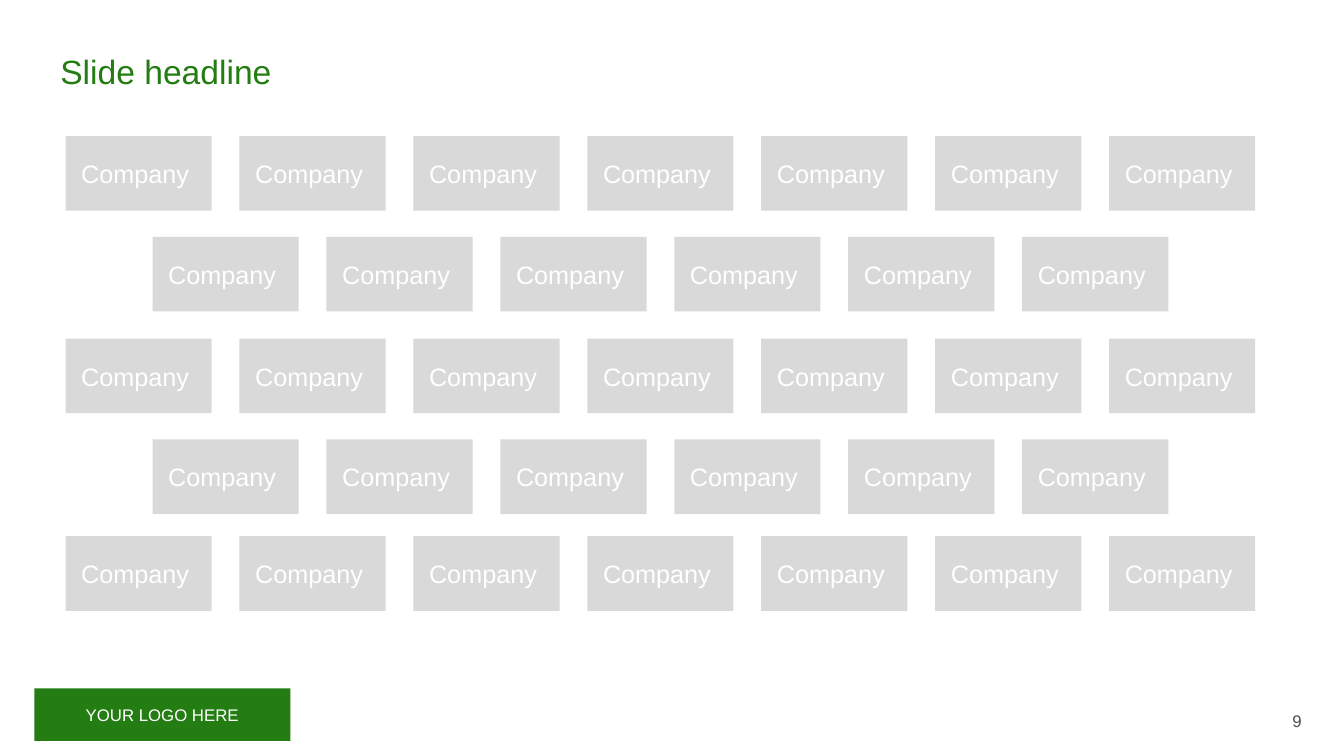
from pptx import Presentation
from pptx.dml.color import RGBColor
from pptx.enum.shapes import MSO_SHAPE
from pptx.enum.text import MSO_ANCHOR, PP_ALIGN
from pptx.util import Inches, Pt

RECTANGLE = MSO_SHAPE.RECTANGLE
TOP, MIDDLE = MSO_ANCHOR.TOP, MSO_ANCHOR.MIDDLE
LEFT, CENTER, RIGHT = PP_ALIGN.LEFT, PP_ALIGN.CENTER, PP_ALIGN.RIGHT

COLORS = {"green": "237D12", "tile": "D9D9D9", "white": "FFFFFF", "number": "4D4E4C"}
FONT = "Arial"
SLIDE_WIDTH, SLIDE_HEIGHT = 13.33, 7.5

GRID_LEFT, LAST_COLUMN_LEFT = 0.65, 11
COLUMNS = 7
COLUMN_PITCH = (LAST_COLUMN_LEFT - GRID_LEFT) / (COLUMNS - 1)
ROW_TOPS = (1.35, 2.35, 3.36, 4.36, 5.32)
TILE_WIDTH, TILE_HEIGHT = 1.45, 0.74


def color(name):
    return RGBColor.from_string(COLORS[name])


def write(holder, text, size, ink, align=LEFT, anchor=MIDDLE, line_spacing=None):
    frame = holder.text_frame
    frame.word_wrap = True
    frame.vertical_anchor = anchor
    paragraph = frame.paragraphs[0]
    paragraph.alignment = align
    paragraph.line_spacing = line_spacing
    run = paragraph.add_run()
    run.text = text
    for attribute, value in {"name": FONT, "size": Pt(size)}.items():
        setattr(run.font, attribute, value)
    run.font.color.rgb = color(ink)


def add_label(slide, box, text, size, ink, **layout):
    label = slide.shapes.add_textbox(*map(Inches, box))
    write(label, text, size, ink, **layout)


def add_tile(slide, box, text, size, fill):
    tile = slide.shapes.add_shape(RECTANGLE, *map(Inches, box))
    tile.shadow.inherit = False
    tile.fill.solid()
    tile.fill.fore_color.rgb = color(fill)
    tile.line.fill.background()
    write(tile, text, size, "white", align=CENTER)


def add_company_grid(slide):
    """Every second row has one tile fewer and is shifted by half a column."""
    for row, top in enumerate(ROW_TOPS):
        shifted = row % 2
        for column in range(COLUMNS - shifted):
            left = GRID_LEFT + (column + shifted / 2) * COLUMN_PITCH
            add_tile(slide, (left, top, TILE_WIDTH, TILE_HEIGHT), "Company ", 18, "tile")


def main():
    deck = Presentation()
    deck.slide_width, deck.slide_height = Inches(SLIDE_WIDTH), Inches(SLIDE_HEIGHT)
    slide = deck.slides.add_slide(deck.slide_layouts[6])
    add_tile(slide, (0.34, 6.83, 2.54, 0.52), "YOUR LOGO HERE", 12, "green")
    add_label(slide, (10.01, 6.95, 3, 0.4), "9", 12, "number", align=RIGHT)
    add_label(slide, (0.5, 0.5, 11.97, 0.59), "Slide headline", 24, "green",
              anchor=TOP, line_spacing=0.9)
    add_company_grid(slide)
    deck.save("out.pptx")


if __name__ == "__main__":
    main()
